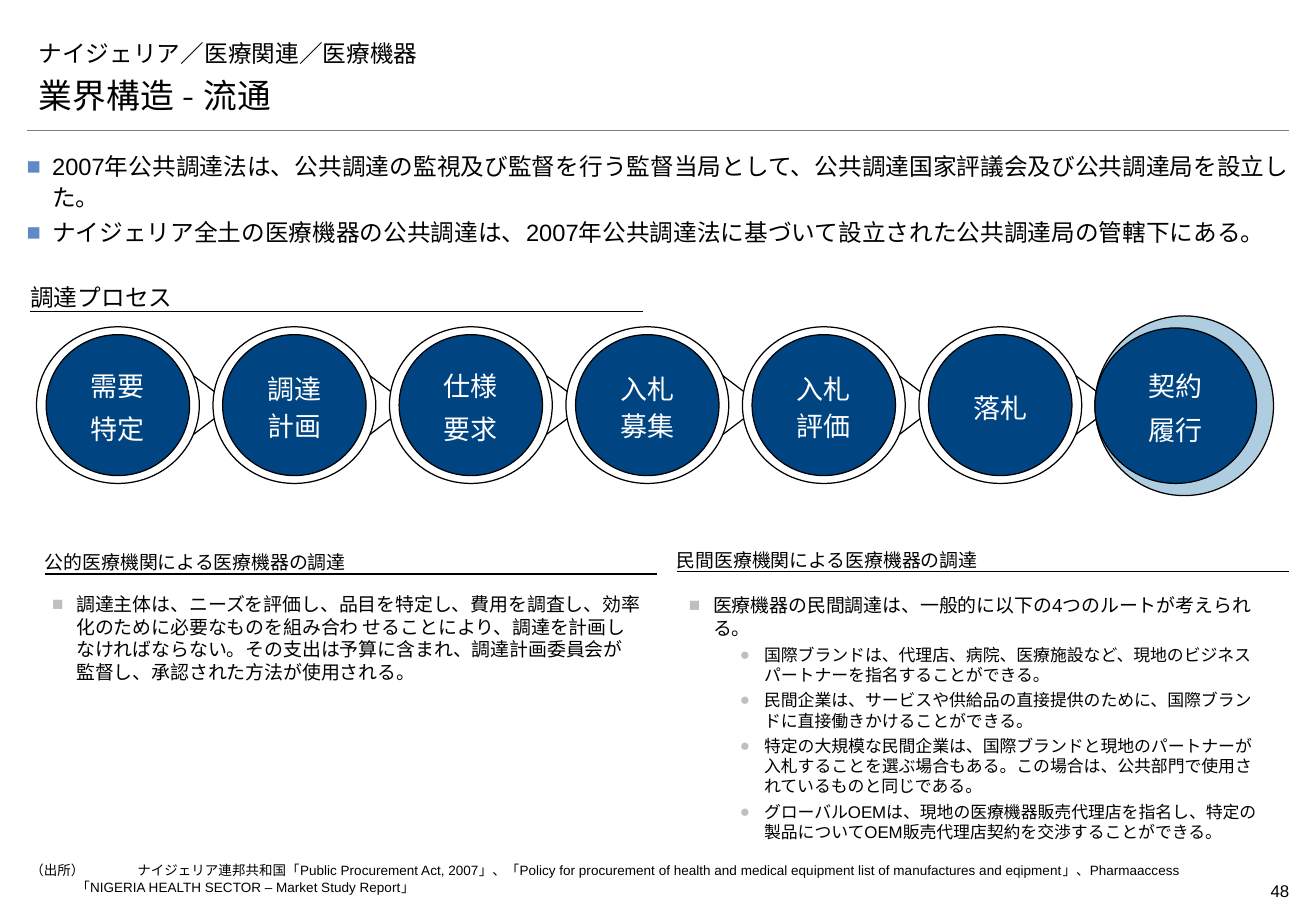
"""Builds a slide on the procurement process for medical devices in Nigeria."""
from lxml import etree
from pptx import Presentation
from pptx.dml.color import RGBColor
from pptx.enum.shapes import MSO_CONNECTOR, MSO_SHAPE
from pptx.enum.text import MSO_ANCHOR, PP_ALIGN
from pptx.oxml.ns import qn
from pptx.util import Inches, Pt

WIDTH, HEIGHT = Inches(10.83), Inches(7.5)
STRAIGHT = MSO_CONNECTOR.STRAIGHT
ELLIPSE, ARROW = MSO_SHAPE.OVAL, MSO_SHAPE.RIGHT_ARROW
TOP, MIDDLE, BOTTOM = MSO_ANCHOR.TOP, MSO_ANCHOR.MIDDLE, MSO_ANCHOR.BOTTOM
LEFT, CENTER, RIGHT, JUSTIFY = PP_ALIGN.LEFT, PP_ALIGN.CENTER, PP_ALIGN.RIGHT, PP_ALIGN.JUSTIFY
COLORS = {
    "black": "000000",
    "white": "FFFFFF",
    "navy": "004481",
    "pale": "AFCDE0",
    "rule": "7F7F7F",
    "lead": "5F8AC3",
    "bullet": "BFBFBF",
}
PADDING = (0.1, 0.05, 0.1, 0.05)
NO_PADDING = (0, 0, 0, 0)
MARGIN, FULL_WIDTH = 2.03, 95.94
HEADING_WIDTH, HEADING_HEIGHT, HEADING_RULE = 46.54, 4.13, 3.15
FIRST_CENTER, STEP_PITCH, STEP_MIDDLE = 8.96, 13.41, 44.47
RING, DISC = (12.37, 17.2), (10.9, 15.47)
LINK_OFFSET, LINK_WIDTH = 1.11, 7.57

LEAD = [
    "2007年公共調達法は、公共調達の監視及び監督を行う監督当局として、公共調達国家評議会及び公共調達局を設立した。",
    "ナイジェリア全土の医療機器の公共調達は、2007年公共調達法に基づいて設立された公共調達局の管轄下にある。",
]
STEPS = [["需要", "特定"], ["調達計画"], ["仕様", "要求"], ["入札募集"], ["入札評価"], ["落札"]]
LAST_STEP = ["契約", "履行"]
HEADINGS = [
    ("調達プロセス", 2.31, 31.07, 14),
    ("公的医療機関による医療機器の調達", 3.42, 59.87, 11.2),
    ("民間医療機関による医療機器の調達", 51.43, 59.6, 11.2),
]
PUBLIC = (
    "調達主体は、ニーズを評価し、品目を特定し、費用を調査し、効率化のために必要なものを組み合わ せることにより、"
    "調達を計画しなければならない。その支出は予算に含まれ、調達計画委員会が監督し、承認された方法が使用される。"
)
PRIVATE = "医療機器の民間調達は、一般的に以下の4つのルートが考えられる。"
ROUTES = [
    "国際ブランドは、代理店、病院、医療施設など、現地のビジネスパートナーを指名することができる。",
    "民間企業は、サービスや供給品の直接提供のために、国際ブランドに直接働きかけることができる。",
    "特定の大規模な民間企業は、国際ブランドと現地のパートナーが入札することを選ぶ場合もある。"
    "この場合は、公共部門で使用されているものと同じである。",
    "グローバルOEMは、現地の医療機器販売代理店を指名し、特定の製品についてOEM販売代理店契約を交渉することができる。",
]
SOURCE = (
    "（出所）\tナイジェリア連邦共和国「Public Procurement Act, 2007」、"
    "「Policy for procurement of health and medical equipment list of manufactures and eqipment」、"
    "Pharmaaccess「NIGERIA HEALTH SECTOR – Market Study Report」"
)


def place(x, y, width, height):
    """Turn percentages of the slide's size into lengths."""
    return [int(share * side / 100) for share, side in zip((x, y, width, height), (WIDTH, HEIGHT) * 2)]


def color(name):
    """Look up a named colour."""
    return RGBColor.from_string(COLORS[name])


def add_bullet(para, mark, mark_color):
    """Give a paragraph a coloured bullet."""
    properties = para._p.get_or_add_pPr()
    tint = etree.SubElement(properties, qn("a:buClr"))
    etree.SubElement(tint, qn("a:srgbClr"), val=COLORS[mark_color])
    etree.SubElement(properties, qn("a:buFont"), typeface="Arial")
    etree.SubElement(properties, qn("a:buChar"), char=mark)


def write(frame, text, first=True, size=14, font="Arial", ink="black", align=LEFT, spacing=None,
          before=0, after=0, margin=0, hanging=0, mark=None, mark_color="bullet"):
    """Write one formatted paragraph into a text frame."""
    para = frame.paragraphs[0] if first else frame.add_paragraph()
    if margin:
        properties = para._p.get_or_add_pPr()
        properties.set("marL", str(Inches(margin)))
        properties.set("indent", str(-Inches(hanging)))
    if mark:
        add_bullet(para, mark, mark_color)
    para.alignment = align
    para.space_before, para.space_after = Pt(0 if first else before), Pt(after)
    if spacing:
        para.line_spacing = spacing
    span = para.add_run()
    span.text = text
    span.font.size, span.font.name = Pt(size), font
    span.font.color.rgb = color(ink)


def set_frame(frame, padding, anchor):
    """Set wrapping, insets and anchor of a text frame."""
    frame.word_wrap = True
    frame.vertical_anchor = anchor
    frame.margin_left, frame.margin_top, frame.margin_right, frame.margin_bottom = map(Inches, padding)


def add_text(page, area, texts, padding=PADDING, anchor=TOP, **style):
    """Add a text box with equally formatted paragraphs and return its frame."""
    frame = page.shapes.add_textbox(*place(*area)).text_frame
    set_frame(frame, padding, anchor)
    for index, text in enumerate(texts):
        write(frame, text, first=index == 0, **style)
    return frame


def add_rule(page, x, y, width, ink="black", weight=0.75):
    """Add a horizontal line."""
    left, top, length, _ = place(x, y, width, 0)
    rule = page.shapes.add_connector(STRAIGHT, left, top, left + length, top)
    rule.line.color.rgb, rule.line.width = color(ink), Pt(weight)
    etree.SubElement(rule._element.spPr, qn("a:effectLst"))


def add_figure(page, kind, area, fill, texts=()):
    """Add an outlined preset shape with centred text."""
    shape = page.shapes.add_shape(kind, *place(*area))
    shape.shadow.inherit = False
    shape.fill.solid()
    shape.fill.fore_color.rgb = color(fill)
    shape.line.color.rgb, shape.line.width = color("black"), Pt(0.75)
    set_frame(shape.text_frame, PADDING, MIDDLE)
    for index, text in enumerate(texts):
        write(shape.text_frame, text, first=index == 0, size=16, ink="white",
              align=CENTER, spacing=1.14, after=4)
    return shape


def around(center, size):
    """Return the area of a given size around a point on the process row."""
    width, height = size
    return center - width / 2, STEP_MIDDLE - height / 2, width, height


def add_step(page, index, texts):
    """Add a process step: link arrow, ring and disc."""
    center = FIRST_CENTER + index * STEP_PITCH
    link_area = (center + LINK_OFFSET, STEP_MIDDLE - DISC[1] / 2, LINK_WIDTH, DISC[1])
    link = add_figure(page, ARROW, link_area, "white")
    link.adjustments[0], link.adjustments[1] = 0.5, 0.93
    add_figure(page, ELLIPSE, around(center, RING), "white")
    add_figure(page, ELLIPSE, around(center, DISC), "navy", texts)


def add_heading(page, text, x, y, size):
    """Add an underlined section heading."""
    add_rule(page, x, y + HEADING_RULE, HEADING_WIDTH)
    add_text(page, (x, y, HEADING_WIDTH, HEADING_HEIGHT), [text], padding=(0, 0.05, 0, 0.08),
             anchor=BOTTOM, size=size, font="Montserrat")


def main():
    """Build and save the slide."""
    deck = Presentation()
    deck.slide_width, deck.slide_height = WIDTH, HEIGHT
    page = deck.slides.add_slide(deck.slide_layouts[6])

    add_rule(page, MARGIN, 14.27, FULL_WIDTH, ink="rule", weight=0.25)
    add_text(page, (90.77, 96, 7.2, 3.6), ["48"], padding=(0, 0.05, 0, 0.05), size=10, align=RIGHT)
    add_text(page, (MARGIN, 3.47, FULL_WIDTH, 4.53), ["ナイジェリア／医療関連／医療機器"],
             anchor=BOTTOM, font="Montserrat")
    add_text(page, (MARGIN, 7.47, FULL_WIDTH, 5.87), ["業界構造 - 流通"],
             anchor=BOTTOM, size=20, font="Montserrat")
    add_text(page, (MARGIN, 16.4, FULL_WIDTH, 6.93), LEAD, padding=NO_PADDING, align=JUSTIFY,
             spacing=1.1, after=2, margin=0.21, hanging=0.21, mark="■", mark_color="lead")
    add_text(page, (2.31, 94.67, 88.73, 3.6), [SOURCE], padding=NO_PADDING, size=8,
             margin=0.38, hanging=0.38)

    for heading in HEADINGS:
        add_heading(page, *heading)
    point = {"size": 11.2, "margin": 0.2, "hanging": 0.2, "mark": "■"}
    add_text(page, (3.05, 64.4, HEADING_WIDTH, 11.33), [PUBLIC], **point)
    private = add_text(page, (51.43, 64.53, 45.06, 26.8), [PRIVATE], **point)
    for route in ROUTES:
        write(private, route, first=False, size=10, before=3, margin=0.62, hanging=0.2, mark="●")

    for index, texts in enumerate(STEPS):
        add_step(page, index, texts)
    add_figure(page, ELLIPSE, (83.2, 34.67, 13.57, 19.73), "pale")
    add_figure(page, ELLIPSE, (83.2, 36, 12.28, 17.07), "navy", LAST_STEP)
    deck.save("out.pptx")


if __name__ == "__main__":
    main()
